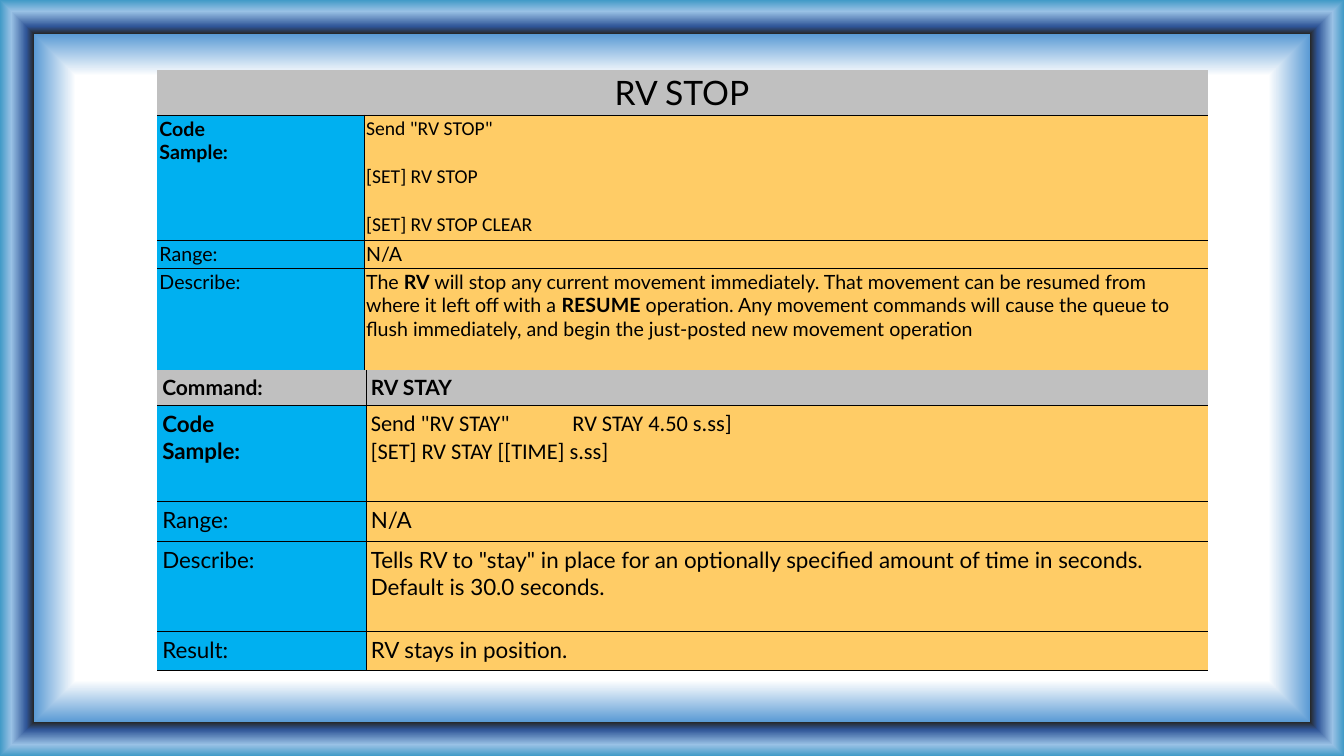
import pptx
import pptx.util
import pptx.dml.color
import pptx.enum.text
import pptx.oxml.ns
from dataclasses import dataclass
from lxml import etree

Pt = pptx.util.Pt
RGB = pptx.dml.color.RGBColor.from_string
qn = pptx.oxml.ns.qn


@dataclass
class Theme:
    ink: str = "000000"
    grey: str = "C0C0C0"
    blue: str = "00B0F0"
    gold: str = "FFCC66"
    head: int = 24
    small: int = 14
    mid: int = 15
    big: int = 16
    font: str = "Lato"
    code: str = "Calibri"
    line: float = 0.38
    frame: tuple = ((80, "FFFFFF"), (91, "5B9BD5"), (91, "262626"),
                    (93, "2F5597"), (97, "99C1E5"), (100, "419AC7"))


theme = Theme()


def write(cell, text, size=theme.small, font=theme.font, bold=False,
          align=None, gap=0, tab=None):
    """Fill a cell: \\n starts a paragraph, \\v breaks a line, ** toggles bold."""
    for n, part in enumerate(text.split("\n")):
        frame = cell.text_frame
        para = frame.add_paragraph() if n else frame.paragraphs[0]
        para.alignment = align
        para.space_before = Pt(gap if n else 0)
        if tab:
            stops = etree.SubElement(para._p.get_or_add_pPr(), qn("a:tabLst"))
            etree.SubElement(stops, qn("a:tab"), pos=str(Pt(tab)), algn="l")
        for k, piece in enumerate(part.split("**")):
            for m, line in enumerate(piece.split("\v")):
                if m:
                    para.add_line_break()
                run = para.add_run()
                run.text = line
                run.font.name = font
                run.font.size = Pt(size)
                run.font.bold = bold or k % 2 == 1
                run.font.color.rgb = RGB(theme.ink)


def paint(cell, color, pad, edges):
    """Set margins, ruled edges (out of L, R, T, B) and fill."""
    cell.margin_left = cell.margin_top = cell.margin_bottom = Pt(pad)
    cell.margin_right = Pt(pad * 1.5)
    props = cell._tc.get_or_add_tcPr()
    for side in "LRTB":
        edge = etree.SubElement(props, qn("a:ln" + side), w=str(Pt(theme.line)))
        if side in edges:
            fill = etree.SubElement(edge, qn("a:solidFill"))
            etree.SubElement(fill, qn("a:srgbClr"), val=theme.ink)
        else:
            etree.SubElement(edge, qn("a:noFill"))
    cell.fill.solid()
    cell.fill.fore_color.rgb = RGB(color)


deck = pptx.Presentation()
deck.slide_width, deck.slide_height = Pt(960), Pt(540)
slide = deck.slides.add_slide(deck.slide_layouts[6])

# Framed background: a rectangular gradient from the centre outwards
back = slide.background.fill
back.gradient()
grad = slide.background._cSld.find(".//" + qn("a:gradFill"))
for node in list(grad):
    grad.remove(node)
stops = etree.SubElement(grad, qn("a:gsLst"))
for spot, color in theme.frame:
    stop = etree.SubElement(stops, qn("a:gs"), pos=str(spot * 1000))
    etree.SubElement(stop, qn("a:srgbClr"), val=color)
way = etree.SubElement(grad, qn("a:path"), path="rect")
etree.SubElement(way, qn("a:fillToRect"), l="50000", t="50000", r="50000", b="50000")

# Each row: height, label, label format, value, value format
stop_rows = [
    (31.7, "RV STOP", dict(size=theme.head, align=pptx.enum.text.PP_ALIGN.CENTER), "", {}),
    (89.3, "Code \vSample:", dict(bold=True),
     'Send "RV STOP"\n[SET] RV STOP\n[SET] RV STOP CLEAR', dict(font=theme.code, gap=17)),
    (19.3, "Range:", {}, "N/A", {}),
    (74.3, "Describe:", {},
     "The **RV** will stop any current movement immediately. That movement can be "
     "resumed from where it left off with a **RESUME** operation. Any movement commands "
     "will cause the queue to flush immediately, and begin the just-posted new movement "
     "operation", {}),
]
big = dict(size=theme.big)
stay_rows = [
    (25, "Command:", dict(size=theme.mid, bold=True),
     "RV STAY", dict(size=theme.mid, bold=True)),
    (68.6, "Code \vSample:", dict(size=theme.big, bold=True),
     'Send "RV STAY"\tRV STAY 4.50 s.ss]\n[SET] RV STAY [[TIME] s.ss]',
     dict(size=theme.big, font=theme.code, tab=144)),
    (28.5, "Range:", big, "N/A", big),
    (64.3, "Describe:", big,
     'Tells RV to "stay" in place for an optionally specified amount of time in seconds.\n'
     "Default is 30.0 seconds.", big),
    (28, "Result:", big, "RV stays in position.", big),
]

left, wide = 112.3, 750.5
for top, split, pad, rows, foot in ((50, 147.6, 1.6, stop_rows, ""),
                                    (264.4, 149, 3.6, stay_rows, "B")):
    high = sum(row[0] for row in rows)
    grid = slide.shapes.add_table(len(rows), 2, Pt(left), Pt(top), Pt(wide), Pt(high)).table
    grid.horz_banding = grid.first_row = False
    grid.columns[0].width, grid.columns[1].width = Pt(split), Pt(wide - split)
    for r, (tall, label, look, value, form) in enumerate(rows):
        grid.rows[r].height = Pt(tall)
        name, body = grid.cell(r, 0), grid.cell(r, 1)
        rule = ("T" if r else "") + ("B" if r < len(rows) - 1 else foot)
        paint(name, theme.blue if r else theme.grey, pad, rule + ("R" if value else ""))
        paint(body, theme.gold if r else theme.grey, pad, rule + ("L" if value else ""))
        write(name, label, **look)
        if value:
            write(body, value, **form)
        else:
            name.merge(body)

deck.save("out.pptx")
